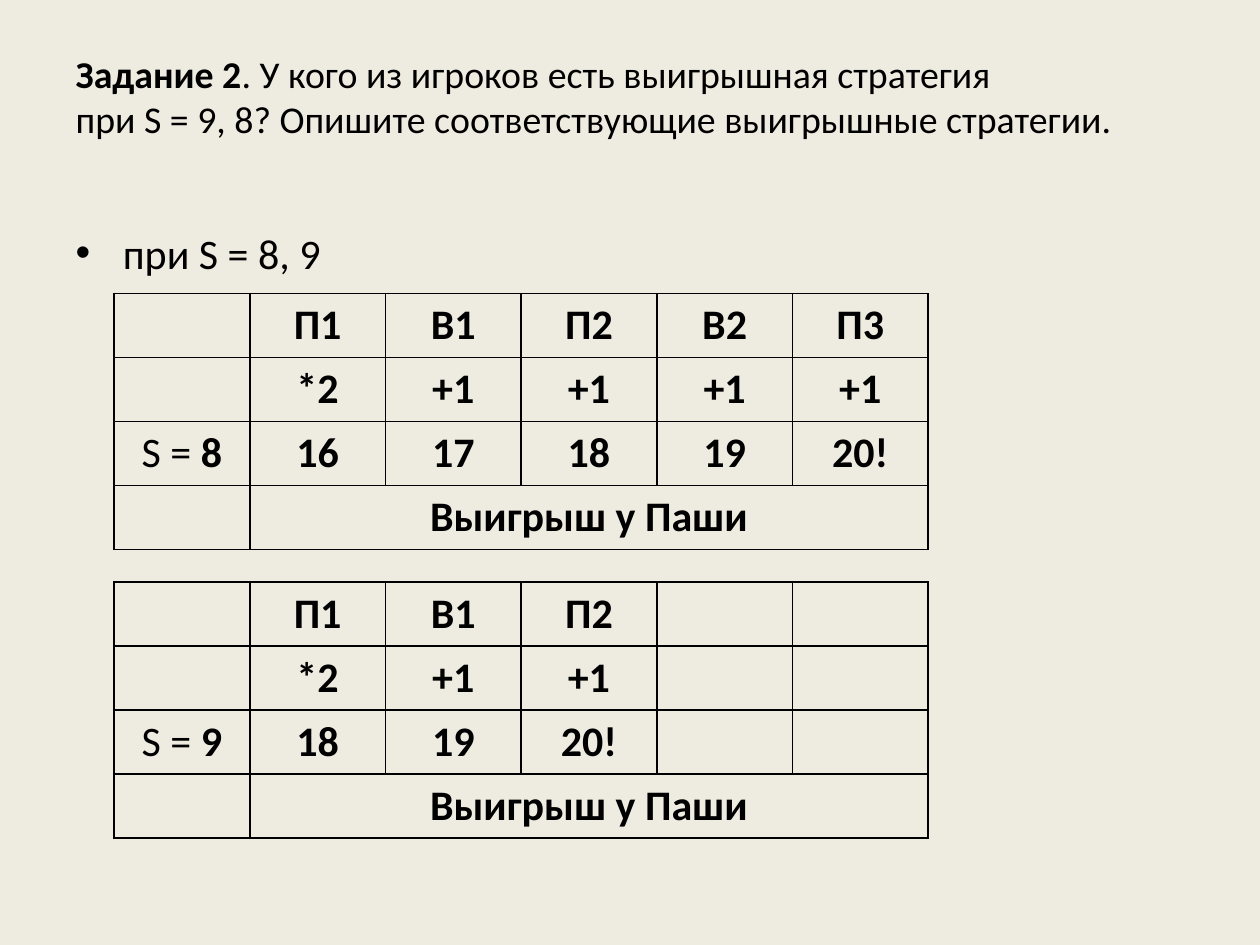
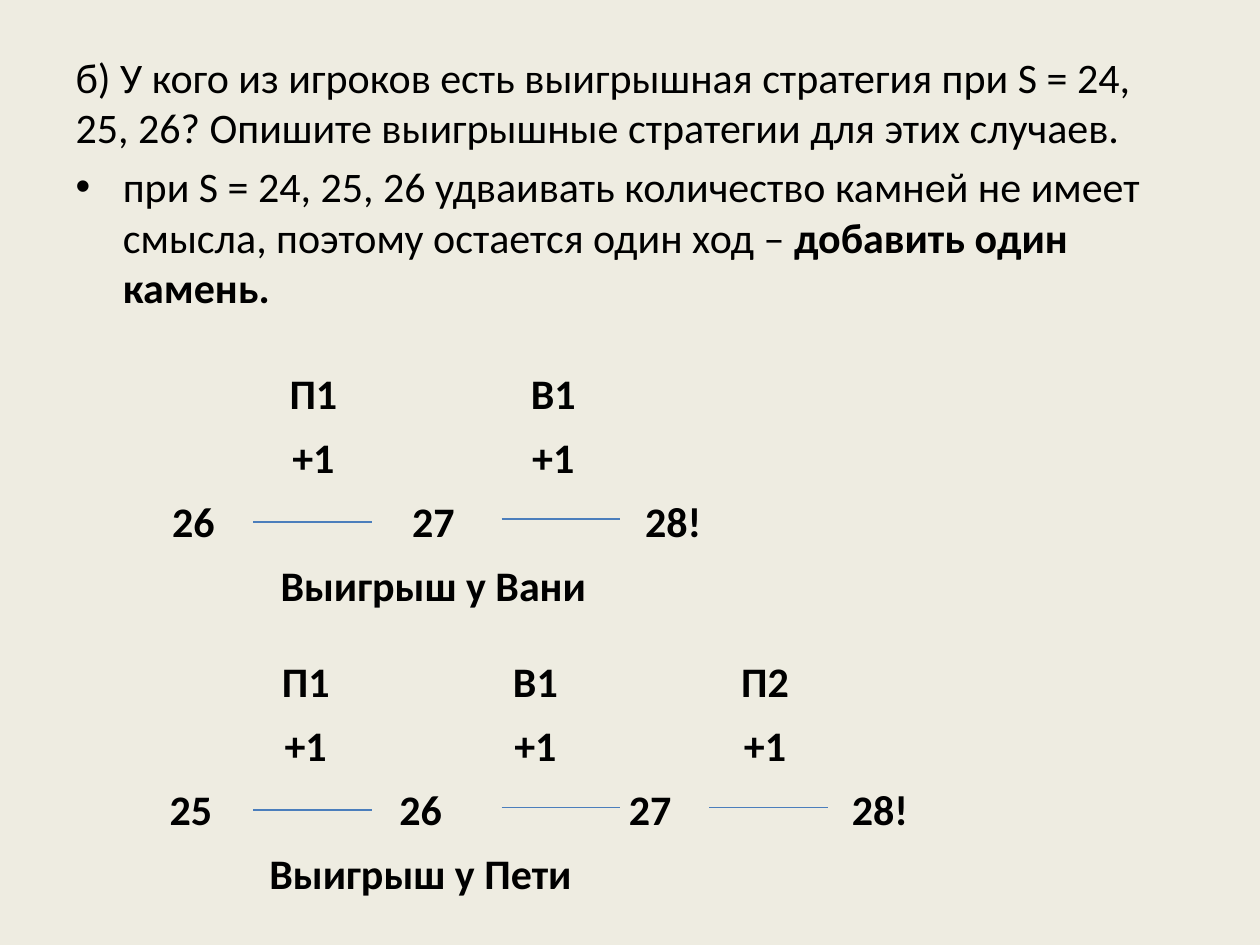
from lxml import etree
from pptx import Presentation
from pptx.dml.color import RGBColor
from pptx.enum.shapes import MSO_CONNECTOR
from pptx.enum.text import MSO_ANCHOR, MSO_AUTO_SIZE, PP_ALIGN
from pptx.oxml.ns import qn
from pptx.util import Cm, Pt

STRAIGHT = MSO_CONNECTOR.STRAIGHT
TOP = MSO_ANCHOR.TOP
NO_FIT = MSO_AUTO_SIZE.NONE
LEFT, CENTER = PP_ALIGN.LEFT, PP_ALIGN.CENTER


def color(value):
    return RGBColor.from_string(value)


class Deck:
    font = "Calibri"
    ink = "000000"
    paper = "EEECE1"
    accent = "4B7EBC"
    size = 24
    row_height = 1.29

    def __init__(self):
        self.prs = Presentation()
        self.prs.slide_width = Cm(25.4)
        self.prs.slide_height = Cm(19.05)

    def slide(self):
        self.s = self.prs.slides.add_slide(self.prs.slide_layouts[1])
        fill = self.s.background.fill
        fill.solid()
        fill.fore_color.rgb = color(self.paper)

    def fill_text(self, p, text, size=size, bold=False, align=LEFT):
        p.alignment = align
        p.font.name = self.font
        p.font.size = Pt(size)
        p.font.color.rgb = color(self.ink)
        parts = text.split("|")
        if len(parts) == 1:
            p.font.bold = bold
        for i, part in enumerate(parts):
            for j, line in enumerate(part.split("\n")):
                if j:
                    p.add_line_break()
                if line:
                    r = p.add_run()
                    r.text = line
                    if len(parts) > 1:
                        r.font.bold = i % 2 == 1

    def place(self, sp, top, height):
        sp.left, sp.top, sp.width, sp.height = Cm(1.27), Cm(top), Cm(22.86), Cm(height)
        tf = sp.text_frame
        tf.word_wrap = True
        tf.auto_size = NO_FIT
        tf.vertical_anchor = TOP
        return tf

    def title(self, text):
        tf = self.place(self.s.shapes.title, 0.76, 3.18)
        tf.margin_top = Cm(0.26)
        self.fill_text(tf.paragraphs[0], text, 21.6)

    def no_title(self):
        sp = self.s.shapes.title
        sp.element.getparent().remove(sp.element)

    def body(self, top, height, bullets, lead=None):
        tf = self.place(self.s.placeholders[1], top, height)
        texts = ([lead] if lead else []) + bullets
        for i, text in enumerate(texts):
            p = tf.add_paragraph() if i else tf.paragraphs[0]
            self.fill_text(p, text)
        if lead:
            pPr = tf.paragraphs[0]._p.get_or_add_pPr()
            pPr.set("marL", "0")
            pPr.set("indent", "0")
            none = etree.Element(qn("a:buNone"))
            pPr.insert_element_before(none, "a:tabLst", "a:defRPr", "a:extLst")

    def borders(self, cell, visible):
        tcPr = cell._tc.get_or_add_tcPr()
        for side in ("lnL", "lnR", "lnT", "lnB"):
            ln = etree.SubElement(tcPr, qn("a:" + side), w=str(Pt(1)))
            if visible:
                fill = etree.SubElement(ln, qn("a:solidFill"))
                etree.SubElement(fill, qn("a:srgbClr"), val=self.ink)
            else:
                etree.SubElement(ln, qn("a:noFill"))

    def table(self, left, top, width, rows, merged, grid=False):
        n = len(rows[0])
        height = Cm(self.row_height * len(rows))
        table = self.s.shapes.add_table(
            len(rows), n, Cm(left), Cm(top), Cm(width), height).table
        table.first_row = table.horz_banding = False
        for i, row in enumerate(rows):
            for j in range(n):
                cell = table.cell(i, j)
                self.borders(cell, grid)
                cell.fill.background()
                if j < len(row) and row[j]:
                    self.fill_text(cell.text_frame.paragraphs[0], row[j],
                                   bold=True, align=CENTER)
        last = len(rows) - 1
        table.cell(last, merged[0]).merge(table.cell(last, merged[1]))

    def line(self, left, top, length=2.39):
        c = self.s.shapes.add_connector(
            STRAIGHT, Cm(left), Cm(top), Cm(left + length), Cm(top))
        c.line.color.rgb = color(self.accent)
        c.line.width = Pt(0.75)
        etree.SubElement(c._element.spPr, qn("a:effectLst"))


def pasha_slide(deck):
    deck.slide()
    deck.title("|Задание 2|. У кого из игроков есть выигрышная стратегия\n"
               "при S = 9, 8? Опишите соответствующие выигрышные стратегии.")
    deck.body(4.45, 4.88, ["при S = 8, 9"])
    games = [
        (5.92, [["", "П1", "В1", "П2", "В2", "П3"],
                ["", "*2", "+1", "+1", "+1", "+1"],
                ["S = |8", "16", "17", "18", "19", "20!"]]),
        (11.73, [["", "П1", "В1", "П2", "", ""],
                 ["", "*2", "+1", "+1", "", ""],
                 ["S = |9", "18", "19", "20!", "", ""]]),
    ]
    for top, moves in games:
        deck.table(2.3, top, 16.41, moves + [["", "Выигрыш у Паши"]], (1, 5), grid=True)


def stones_slide(deck):
    deck.slide()
    deck.no_title()
    deck.body(0.91, 5.79,
              ["при S = 24, 25, 26 удваивать количество камней не имеет смысла, "
               "поэтому остается один ход – |добавить один камень."],
              lead="б) У кого из игроков есть выигрышная стратегия при S = 24, 25, 26? "
                   "Опишите выигрышные стратегии для этих случаев.")
    games = [
        (7.32, 12.09, ["П1", "В1"], 26, "Выигрыш у Вани",
         [(5.11, 10.52), (10.11, 10.46)]),
        (13.13, 16.21, ["П1", "В1", "П2"], 25, "Выигрыш у Пети",
         [(5.11, 16.33), (10.11, 16.28), (14.3, 16.28)]),
    ]
    for top, width, players, start, winner, lines in games:
        names, steps, stones = [""], [""], [str(start)]
        for i, player in enumerate(players, 1):
            names += [player, ""]
            steps += ["+1", ""]
            stones += ["", str(start + i)]
        stones[-1] += "!"
        deck.table(2.69, top, width, [names, steps, stones, [winner]], (0, 4))
        for left, y in lines:
            deck.line(left, y)


def main():
    deck = Deck()
    pasha_slide(deck)
    stones_slide(deck)
    deck.prs.save("out.pptx")


if __name__ == "__main__":
    main()
